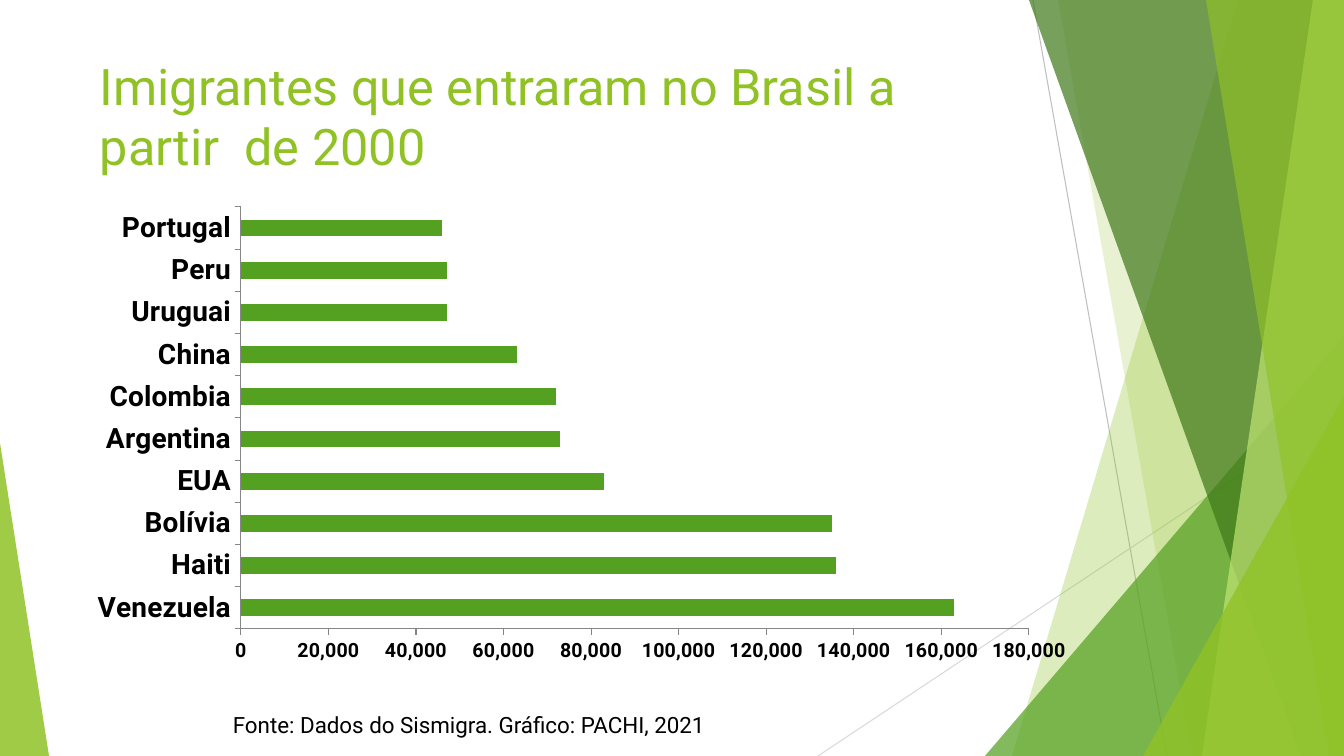
from lxml import etree
from pptx import Presentation
from pptx.chart.data import CategoryChartData
from pptx.dml.color import RGBColor
from pptx.enum.chart import XL_CHART_TYPE as Chart, XL_TICK_MARK as Tick
from pptx.enum.shapes import MSO_CONNECTOR as Conn, MSO_SHAPE as Shape
from pptx.oxml import parse_xml
from pptx.oxml.ns import nsdecls, qn
from pptx.util import Pt

# Content
FONT = "Roboto"
TITLE = "Imigrantes que entraram no Brasil a partir  de 2000"
SOURCE = "Fonte: Dados do Sismigra. Gráfico: PACHI, 2021"
ENTRIES = [
    ("Venezuela", 163000), ("Haiti", 136000), ("Bolívia", 135000),
    ("EUA", 83000), ("Argentina", 73000), ("Colombia", 72000),
    ("China", 63000), ("Uruguai", 47000), ("Peru", 47000),
    ("Portugal", 46000),
]

# Geometry in px: left, top, width, height
PX = 914400 / 100.8
W, H = 1344, 756
TITLE_BOX = (90, 50, 947, 145)
CHART_BOX = (77, 198, 1009, 475)
PLOT_BOX = (241, 207, 788, 422)
SOURCE_BOX = (223, 706, 666, 37)

# Backdrop: thin lines, then bands (top left, top right, bottom right,
# bottom left) and right-angled triangles (box, apex), back to front
LINES = [((1033, 0, 1167, H), "BFBFBF"), ((W, 406, 818, H), "D9D9D9")]
PARTS = [
    ("band", (1238, W, W, 1012), "90C226", 30),
    ("band", (1058, W, W, 1192), "90C226", 20),
    ("tri", (985, 336, 359, 420, 1), "54A021", 72),
    ("band", (1029, W, W, 1301), "3F7819", 70),
    ("band", (1313, W, W, 1202), "C0E474", 70),
    ("band", (1206, W, W, 1329), "90C226", 65),
    ("tri", (1143, 396, 201, 360, 1), "90C226", 80),
    ("tri", (0, 443, 49, 313, 0), "90C226", 85),
]


def emu(*vals):
    return [round(v * PX) for v in vals]


def rgb(code):
    return RGBColor.from_string(code)


def style(font, size, color="000000", bold=False):
    font.name, font.size, font.bold = FONT, Pt(size), bold
    font.color.rgb = rgb(color)


def paint(part, color, alpha):
    part.shadow.inherit = False
    part.line.fill.background()
    part.fill.solid()
    part.fill.fore_color.rgb = rgb(color)
    tint = part.fill._xPr.find(".//" + qn("a:srgbClr"))
    etree.SubElement(tint, qn("a:alpha")).set("val", str(alpha * 1000))


def write(box, text, size, color):
    frame = slide.shapes.add_textbox(*emu(*box)).text_frame
    frame.word_wrap = True
    run = frame.paragraphs[0].add_run()
    run.text = text
    style(run.font, size, color)


prs = Presentation()
prs.slide_width, prs.slide_height = emu(W, H)
slide = prs.slides.add_slide(prs.slide_layouts[6])

# Backdrop
for ends, color in LINES:
    line = slide.shapes.add_connector(Conn.STRAIGHT, *emu(*ends))
    line.line.color.rgb = rgb(color)
    line.line.width = Pt(0.75)
    etree.SubElement(line._element.spPr, qn("a:effectLst"))

for kind, nums, color, alpha in PARTS:
    if kind == "band":
        tl, tr, br, bl = nums
        edge = slide.shapes.build_freeform(tl, 0, scale=PX)
        edge.add_line_segments([(tr, 0), (br, H), (bl, H)], close=True)
        part = edge.convert_to_shape()
    else:
        *box, apex = nums
        part = slide.shapes.add_shape(Shape.ISOSCELES_TRIANGLE, *emu(*box))
        part.adjustments[0] = apex
    paint(part, color, alpha)

# Title
write(TITLE_BOX, TITLE, 36, "90C226")

# Bar chart
data = CategoryChartData(number_format="#,##0")
data.categories = [name for name, _ in ENTRIES]
data.add_series("Imigrantes", [count for _, count in ENTRIES])
chart = slide.shapes.add_chart(
    Chart.BAR_CLUSTERED, *emu(*CHART_BOX), data).chart
chart.has_legend = chart.has_title = False
style(chart.font, 10)

plot = chart.plots[0]
plot.gap_width = 150
plot.vary_by_categories = False
bars = plot.series[0].format.fill
bars.solid()
bars.fore_color.rgb = rgb("54A021")

for axis, size in ((chart.category_axis, 20), (chart.value_axis, 14)):
    axis.has_major_gridlines = False
    axis.major_tick_mark, axis.minor_tick_mark = Tick.OUTSIDE, Tick.NONE
    axis.format.line.color.rgb = rgb("868686")
    axis.format.line.width = Pt(0.75)
    style(axis.tick_labels.font, size, bold=True)
scale = chart.value_axis
scale.minimum_scale, scale.maximum_scale, scale.major_unit = 0, 180000, 20000
scale.tick_labels.number_format = "#,##0"
scale.tick_labels.number_format_is_linked = False

# Fixed plot area, as shares of the chart box
cx, cy, cw, ch = CHART_BOX
px, py, pw, ph = PLOT_BOX
share = {"x": (px - cx) / cw, "y": (py - cy) / ch, "w": pw / cw, "h": ph / ch}
rules = "".join(f'<c:{k}Mode val="edge"/>' for k in "xy")
rules += "".join(f'<c:{k} val="{v:.4f}"/>' for k, v in share.items())
area = chart._chartSpace.chart.plotArea
for old in area.findall(qn("c:layout")):
    area.remove(old)
area.insert(0, parse_xml(
    f'<c:layout {nsdecls("c")}><c:manualLayout>'
    f'<c:layoutTarget val="inner"/>{rules}</c:manualLayout></c:layout>'))

# Source line
write(SOURCE_BOX, SOURCE, 16, "000000")

prs.save("out.pptx")
